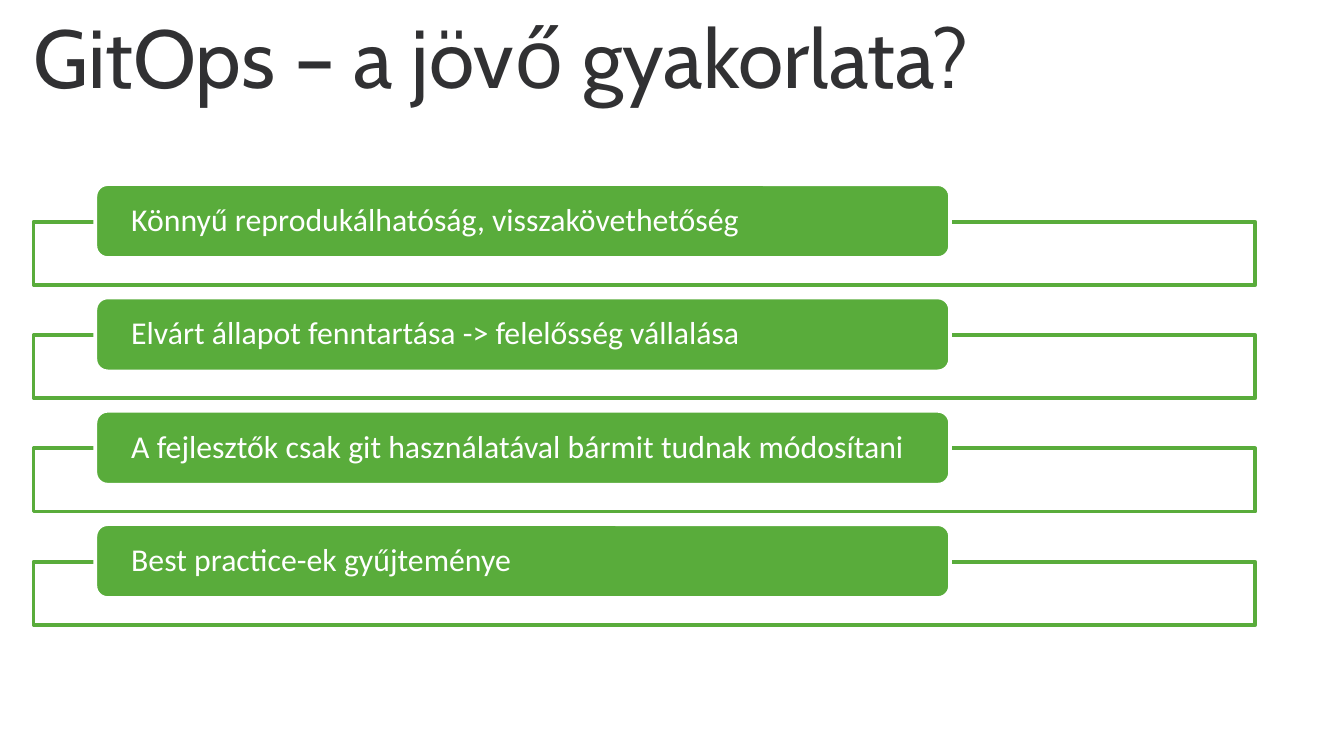
"""Build a slide listing the benefits of GitOps as four labelled bars."""
import lxml.etree
import pptx
import pptx.dml.color
import pptx.enum.shapes
import pptx.enum.text
import pptx.oxml.ns
import pptx.util

Inches = pptx.util.Inches
Pt = pptx.util.Pt
MSO_SHAPE = pptx.enum.shapes.MSO_SHAPE
GREEN = "59AC3B"
WHITE = "FFFFFF"
BENEFITS = [
    "Könnyű reprodukálhatóság, visszakövethetőség",
    "Elvárt állapot fenntartása -> felelősség vállalása",
    "A fejlesztők csak git használatával bármit tudnak módosítani",
    "Best practice-ek gyűjteménye",
]
ROW_PITCH = 2.53 / 3


def paint(color_format, color):
    color_format.rgb = pptx.dml.color.RGBColor.from_string(color)


def write(shape, text, font_name, size, color, line_spacing, side_inset):
    frame = shape.text_frame
    frame.word_wrap = True
    frame.margin_left = frame.margin_right = Inches(side_inset)
    frame.margin_top = frame.margin_bottom = 0
    paragraph = frame.paragraphs[0]
    paragraph.alignment = pptx.enum.text.PP_ALIGN.LEFT
    paragraph.line_spacing = line_spacing
    run = paragraph.add_run()
    run.text = text
    run.font.name = font_name
    run.font.size = Pt(size)
    paint(run.font.color, color)


presentation = pptx.Presentation()
presentation.slide_width = Inches(10)
presentation.slide_height = Inches(10) * 9 // 16
slide = presentation.slides.add_slide(presentation.slide_layouts[6])

title = slide.shapes.add_textbox(Inches(0.25), Inches(0.19), Inches(9.54), Inches(0.61))
write(title, "GitOps – a jövő gyakorlata?", "Cabin", 44, "313133", 0.8, 0)

for row, benefit in enumerate(BENEFITS):
    top = 1.37 + row * ROW_PITCH
    frame_box = slide.shapes.add_shape(
        MSO_SHAPE.RECTANGLE, Inches(0.25), Inches(top + 0.28), Inches(9.09), Inches(0.47))
    label = slide.shapes.add_shape(
        MSO_SHAPE.ROUNDED_RECTANGLE, Inches(0.71), Inches(top), Inches(6.36), Inches(0.55))
    for shape, fill, line in ((frame_box, WHITE, GREEN), (label, GREEN, WHITE)):
        shape.shadow.inherit = False
        shape.fill.solid()
        paint(shape.fill.fore_color, fill)
        paint(shape.line.color, line)
        shape.line.width = Pt(2)
    fill_color = frame_box.element.spPr.find(pptx.oxml.ns.qn("a:solidFill"))[0]
    lxml.etree.SubElement(fill_color, pptx.oxml.ns.qn("a:alpha"), val="90000")
    label.text_frame.vertical_anchor = pptx.enum.text.MSO_ANCHOR.MIDDLE
    write(label, benefit, "Calibri", 17, WHITE, 0.9, 0.24)

presentation.save("out.pptx")
